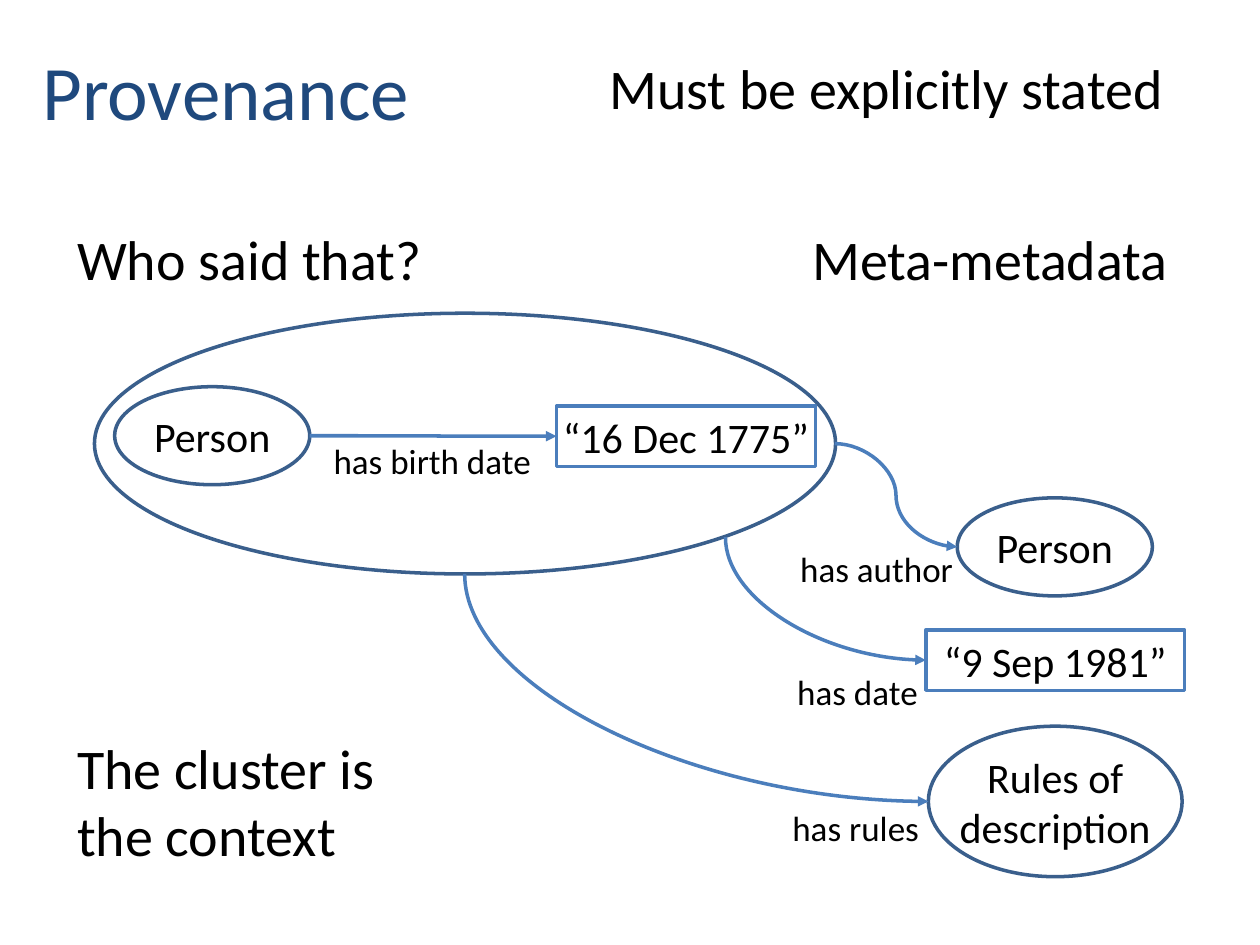
import pptx
import pptx.dml.color
import pptx.enum.shapes
import pptx.enum.text
import pptx.oxml
import pptx.oxml.ns
import pptx.util

Pt = pptx.util.Pt
Shapes = pptx.enum.shapes.MSO_SHAPE
Align = pptx.enum.text.PP_ALIGN
Anchor = pptx.enum.text.MSO_ANCHOR
AutoSize = pptx.enum.text.MSO_AUTO_SIZE

BLACK, TITLE_BLUE, OVAL_BLUE, LINE_BLUE = "000000", "1F497D", "3A5F8C", "4B7EBC"
LINE_WIDTH = 2
INSET = 3
PERSON_SIZE = (111.5, 56)
VALUE_SIZE = (148, 34.5)

HEADINGS = [
    ("Must be explicitly stated", (341, 27, 334, 46)),
    ("Who said that?", (37, 125, 214, 46)),
    ("Meta-metadata", (457, 125, 220, 46)),
    ("The cluster is\nthe context", (37, 415.5, 187, 85)),
]
LABELS = [
    ("has birth date", (187, 248, 120, 30)),
    ("has author", (454, 310, 94, 30)),
    ("has date", (452, 380, 76, 30)),
    ("has rules", (449.5, 458, 79, 30)),
]


def color(value):
    return pptx.dml.color.RGBColor.from_string(value)


def apply_format(target, values):
    for name, value in values.items():
        setattr(target, name, value)


def write_text(shape, text, size, text_color=BLACK, alignment=Align.LEFT, **frame_format):
    frame = shape.text_frame
    apply_format(frame, {
        "text": text, "word_wrap": False, "auto_size": AutoSize.NONE, **frame_format,
    })
    for paragraph in frame.paragraphs:
        paragraph.alignment = alignment
        apply_format(paragraph.font, {"name": "Calibri", "size": Pt(size)})
        paragraph.font.color.rgb = color(text_color)


def centered(anchor):
    margins = ("margin_left", "margin_top", "margin_right", "margin_bottom")
    return {
        "alignment": Align.CENTER,
        "vertical_anchor": anchor,
        **dict.fromkeys(margins, Pt(INSET)),
    }


def add_title(slide, text, box):
    title = slide.shapes.title
    apply_format(title, dict(zip(("left", "top", "width", "height"), map(Pt, box))))
    write_text(title, text, 44, TITLE_BLUE, vertical_anchor=Anchor.TOP)


def add_text(slide, text, box, size, **text_format):
    write_text(slide.shapes.add_textbox(*map(Pt, box)), text, size, **text_format)


def add_outline(slide, kind, box, line_color, text=""):
    shape = slide.shapes.add_shape(kind, *map(Pt, box))
    shape.shadow.inherit = False
    shape.fill.background()
    shape.line.color.rgb = color(line_color)
    shape.line.width = Pt(LINE_WIDTH)
    if text:
        write_text(shape, text, 24, **centered(Anchor.MIDDLE))
    return shape


def add_curve(slide, start, end, target=None, quarter=False):
    connector = slide.shapes.add_connector(
        pptx.enum.shapes.MSO_CONNECTOR.CURVE, *map(Pt, start + end))
    if target is not None:
        connector.end_connect(target, 1)
    if quarter:
        turn_to_quarter(connector)
    connector.line.color.rgb = color(LINE_BLUE)
    connector.line.width = Pt(LINE_WIDTH)
    qualified = pptx.oxml.ns.qn
    properties = connector._element.spPr
    line = properties.find(qualified("a:ln"))
    line.append(line.makeelement(qualified("a:tailEnd"), {"type": "triangle"}))
    properties.append(properties.makeelement(qualified("a:effectLst"), {}))


def turn_to_quarter(connector):
    width, height = connector.width, connector.height
    shift = (width - height) // 2
    apply_format(connector, {
        "left": connector.left + shift, "top": connector.top - shift,
        "width": height, "height": width,
    })
    properties = connector._element.spPr
    properties.find(pptx.oxml.ns.qn("a:prstGeom")).set("prst", "curvedConnector2")
    transform = properties.find(pptx.oxml.ns.qn("a:xfrm"))
    transform.set("rot", str(270 * 60000))
    transform.set("flipH", "1")


def main():
    presentation = pptx.Presentation()
    presentation.slide_width, presentation.slide_height = Pt(720), Pt(540)
    slide = presentation.slides.add_slide(presentation.slide_layouts[5])

    add_title(slide, "Provenance", (17, 21, 226, 60.5))
    for text, box in HEADINGS:
        add_text(slide, text, box, 32)

    for corner in ((65.5, 221), (547, 284.5)):
        add_outline(slide, Shapes.OVAL, corner + PERSON_SIZE, OVAL_BLUE, "Person")
    add_outline(slide, Shapes.OVAL, (54, 179, 423.5, 149), OVAL_BLUE)
    add_outline(slide, Shapes.OVAL, (530.5, 415, 145, 86), OVAL_BLUE, "Rules of\ndescription")
    birth_date, record_date = [
        add_outline(slide, Shapes.RECTANGLE, corner + VALUE_SIZE, LINE_BLUE, text)
        for text, corner in (("“16 Dec 1775”", (318, 232)), ("“9 Sep 1981”", (529, 360)))
    ]

    add_curve(slide, (177, 249), (318, 249.25), birth_date)
    add_curve(slide, (477, 253.5), (547, 312.5))
    add_curve(slide, (414.5, 307), (529, 377.25), record_date, quarter=True)
    add_curve(slide, (265.5, 328), (530.5, 458), quarter=True)
    for text, box in LABELS:
        add_text(slide, text, box, 20, **centered(Anchor.TOP))

    presentation.save("out.pptx")


if __name__ == "__main__":
    main()
